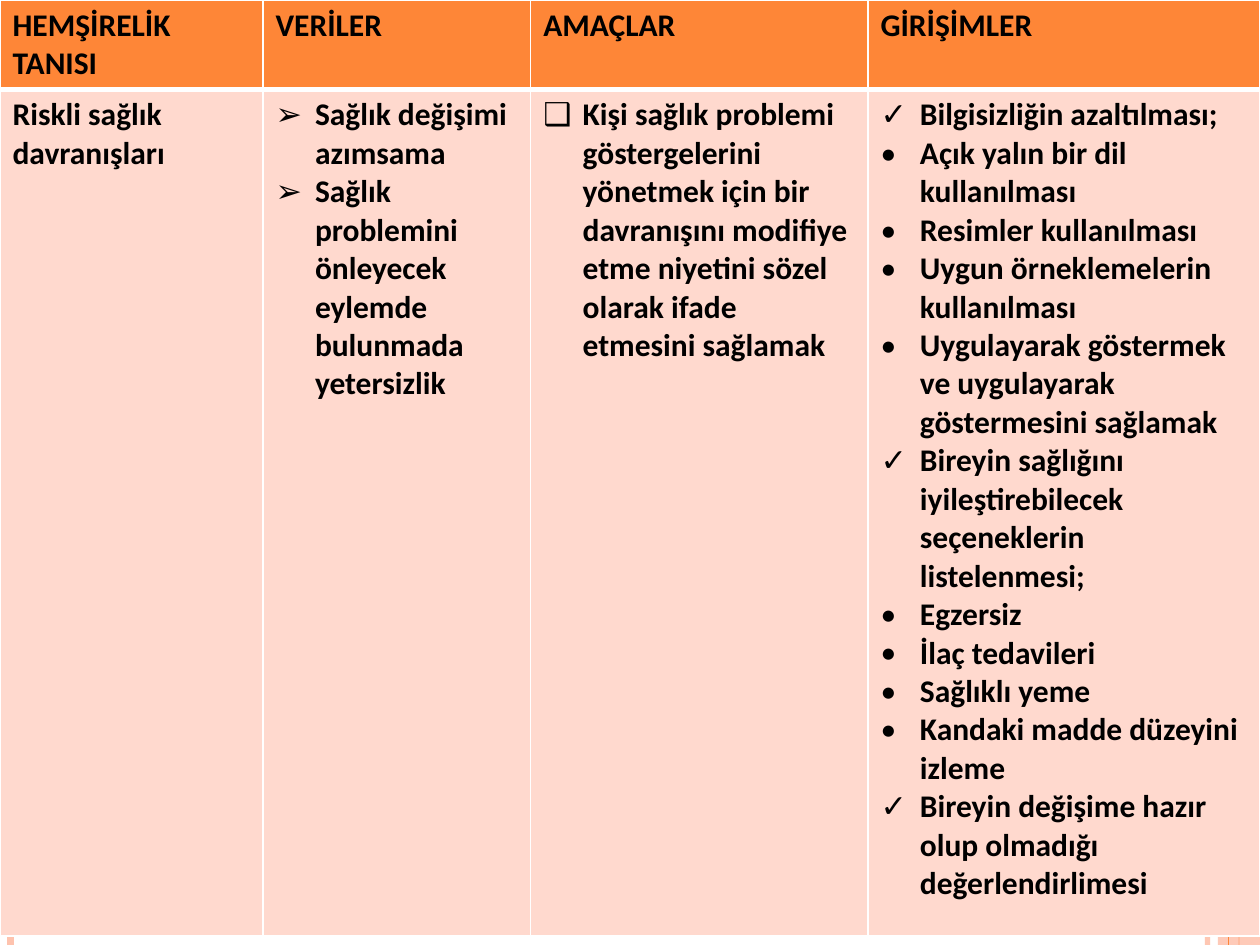
from dataclasses import dataclass

from pptx import Presentation
from pptx.dml.color import RGBColor
from pptx.enum import shapes, text
from pptx.oxml import ns, xmlchemy
from pptx.util import Pt


@dataclass(frozen=True)
class Theme:
    orange: str = "FE8637"
    peach: str = "FEC3AE"
    pale: str = "FFD9CE"
    white: str = "FFFFFF"
    ink: str = "000000"
    font: str = "Calibri"
    size: float = 18
    hanging: float = 22.5


WIDTH, HEIGHT = 720, 540
COLUMNS = [150.3, 153, 192.7, 224]
ROWS = [50.4, 483.8]

# Care plan: headings, then (bullet, wording) items for each column
HEADINGS = ["HEMŞİRELİK TANISI", "VERİLER", "AMAÇLAR", "GİRİŞİMLER"]
CARE_PLAN = [
    [(None, "Riskli sağlık davranışları")],
    [("➢", "Sağlık değişimi azımsama"),
     ("➢", "Sağlık problemini önleyecek eylemde bulunmada yetersizlik")],
    [("❑", "Kişi sağlık problemi göstergelerini yönetmek için bir davranışını "
           "modifiye etme niyetini sözel olarak ifade etmesini sağlamak")],
    [("✓", "Bilgisizliğin azaltılması;"),
     ("•", "Açık yalın bir dil kullanılması"),
     ("•", "Resimler kullanılması"),
     ("•", "Uygun örneklemelerin kullanılması"),
     ("•", "Uygulayarak göstermek ve uygulayarak göstermesini sağlamak"),
     ("✓", "Bireyin sağlığını iyileştirebilecek seçeneklerin listelenmesi;"),
     ("•", "Egzersiz"),
     ("•", "İlaç tedavileri"),
     ("•", "Sağlıklı yeme"),
     ("•", "Kandaki madde düzeyini izleme"),
     ("✓", "Bireyin değişime hazır olup olmadığı değerlendirlimesi")],
]


def add_child(parent, tag, **attributes):
    child = xmlchemy.OxmlElement(tag)
    for name, value in attributes.items():
        child.set(name, str(value))
    parent.append(child)
    return child


def write(para, wording, *, font, size, color, bold=False, bullet=None, hanging=0):
    """Fill a paragraph with one formatted span and an optional bullet."""
    para.alignment = text.PP_ALIGN.LEFT
    if bullet:
        properties = para._p.get_or_add_pPr()
        properties.set("marL", str(Pt(hanging)))
        properties.set("indent", str(-Pt(hanging)))
        add_child(properties, "a:buFont", typeface=font)
        add_child(properties, "a:buChar", char=bullet)
    span = para.add_run()
    span.text = wording
    span.font.name, span.font.size, span.font.bold = font, Pt(size), bold
    span.font.color.rgb = RGBColor.from_string(color)


def set_opacity(element, percent):
    color = next(element.iter(ns.qn("a:srgbClr")))
    add_child(color, "a:alpha", val=percent * 1000)


class Painter:
    def __init__(self, theme, page):
        self.theme, self.page = theme, page

    def vertical_line(self, x, color, width, opacity=100):
        line = self.page.shapes.add_connector(
            shapes.MSO_CONNECTOR.STRAIGHT, Pt(x), 0, Pt(x), Pt(HEIGHT))
        line.line.color.rgb = RGBColor.from_string(color)
        line.line.width = Pt(width)
        if opacity < 100:
            set_opacity(line.element, opacity)
        add_child(line.element.spPr, "a:effectLst")

    def band(self, x, width, color, opacity):
        box = self.page.shapes.add_shape(
            shapes.MSO_SHAPE.RECTANGLE, Pt(x), 0, Pt(width), Pt(HEIGHT))
        box.shadow.inherit = False
        box.fill.solid()
        box.fill.fore_color.rgb = RGBColor.from_string(color)
        box.line.fill.background()
        set_opacity(box.element, opacity)

    def cell(self, cell, items, fill, top=1, bottom=1):
        properties = cell._tc.get_or_add_tcPr()
        for side, width in zip("LRTB", (1, 1, top, bottom)):
            border = add_child(properties, f"a:ln{side}", w=Pt(width))
            solid = add_child(border, "a:solidFill")
            add_child(solid, "a:srgbClr", val=self.theme.white)
        cell.fill.solid()
        cell.fill.fore_color.rgb = RGBColor.from_string(fill)
        frame = cell.text_frame
        for index, (bullet, wording) in enumerate(items):
            para = frame.add_paragraph() if index else frame.paragraphs[0]
            write(para, wording, font=self.theme.font, size=self.theme.size,
                  color=self.theme.ink, bold=True, bullet=bullet,
                  hanging=self.theme.hanging)

    def table(self, headings, contents):
        table = self.page.shapes.add_table(
            len(ROWS), len(COLUMNS), 0, 0, Pt(sum(COLUMNS)), Pt(sum(ROWS))).table
        table.horz_banding = False
        for row, height in zip(table.rows, ROWS):
            row.height = Pt(height)
        for index, width in enumerate(COLUMNS):
            table.columns[index].width = Pt(width)
            self.cell(table.cell(0, index), [(None, headings[index])],
                      self.theme.orange, bottom=3)
            self.cell(table.cell(1, index), contents[index],
                      self.theme.pale, top=3)


def main():
    deck = Presentation()
    deck.slide_width, deck.slide_height = Pt(WIDTH), Pt(HEIGHT)
    theme = Theme()
    painter = Painter(theme, deck.slides.add_slide(deck.slide_layouts[6]))

    # Edge stripes, which show below the table
    painter.vertical_line(690, theme.peach, 3, opacity=93)
    painter.vertical_line(6, theme.peach, 4.5)
    painter.vertical_line(708, theme.orange, 1.5)
    painter.band(696, 24, theme.peach, opacity=87)
    painter.vertical_line(702, theme.orange, 0.75)

    # Care plan table
    painter.table(HEADINGS, CARE_PLAN)
    deck.save("out.pptx")


if __name__ == "__main__":
    main()
